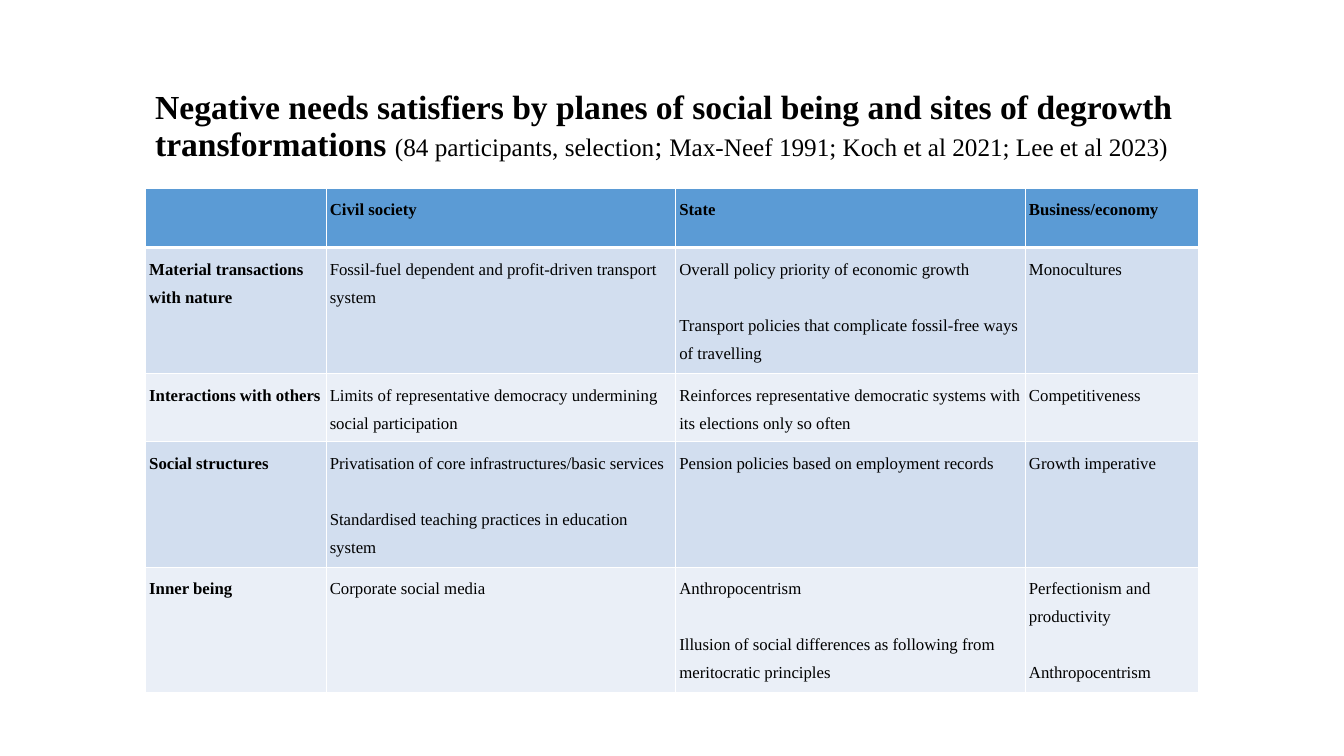
from lxml.etree import SubElement
from pptx import Presentation
from pptx.dml.color import RGBColor
from pptx.enum.text import MSO_ANCHOR, PP_ALIGN
from pptx.oxml.ns import qn
from pptx.util import Cm, Pt

FONT = "Times New Roman"
BLACK, WHITE = "000000", "FFFFFF"
HEADER_FILL, BAND_FILLS = "5B9BD5", ("D2DEEF", "EAEFF7")

# text, size, bold
TITLE = [
    ("Negative needs satisfiers by planes of social being and sites of "
     "degrowth transformations ", 24, True),
    ("(84 participants, selection", 18, False),
    ("; ", 20, False),
    ("Max-Neef 1991; Koch et al 2021; Lee et al 2023)", 18, False),
]

SITES = ["", "Civil society", "State", "Business/economy"]

# plane of social being, then the satisfiers at each site
PLANES = [
    ("Material transactions with nature",
     ["Fossil-fuel dependent and profit-driven transport system"],
     ["Overall policy priority of economic growth",
      "Transport policies that complicate fossil-free ways of travelling"],
     ["Monocultures"]),
    ("Interactions with others",
     ["Limits of representative democracy undermining social participation"],
     ["Reinforces representative democratic systems with its elections only so often"],
     ["Competitiveness"]),
    ("Social structures",
     ["Privatisation of core infrastructures/basic services",
      "Standardised teaching practices in education system"],
     ["Pension policies based on employment records"],
     ["Growth imperative"]),
    ("Inner being",
     ["Corporate social media"],
     ["Anthropocentrism",
      "Illusion of social differences as following from meritocratic principles"],
     ["Perfectionism and productivity", "Anthropocentrism"]),
]

COLUMN_WIDTHS = [4.55, 8.81, 8.81, 4.37]
ROW_HEIGHTS = [1.5, 3.03, 1.62, 3.05, 3.02]
CELL_INSET = 0.09


def rgb(color):
    return RGBColor.from_string(color)


def add_run(paragraph, text, size, bold):
    run = paragraph.add_run()
    run.text = text
    run.font.name = FONT
    run.font.size = Pt(size)
    run.font.bold = bold
    run.font.color.rgb = rgb(BLACK)


def add_borders(cell, top, bottom):
    """Draw white cell borders; top and bottom widths are in points."""
    properties = cell._tc.get_or_add_tcPr()
    for side, width in (("L", 1), ("R", 1), ("T", top), ("B", bottom)):
        line = SubElement(properties, qn(f"a:ln{side}"), w=str(Pt(width)))
        fill = SubElement(line, qn("a:solidFill"))
        SubElement(fill, qn("a:srgbClr"), val=WHITE)


def fill_cell(cell, texts, bold, fill, alignment, top=1, bottom=1):
    add_borders(cell, top, bottom)
    cell.fill.solid()
    cell.fill.fore_color.rgb = rgb(fill)
    cell.margin_left = cell.margin_right = Cm(CELL_INSET)
    cell.margin_top = cell.margin_bottom = Cm(CELL_INSET)
    frame = cell.text_frame
    for index, text in enumerate(texts):
        paragraph = frame.add_paragraph() if index else frame.paragraphs[0]
        paragraph.alignment = alignment
        paragraph.line_spacing = 1.5
        if index:
            paragraph.space_before = Pt(20)
        if text:
            add_run(paragraph, text, 12, bold)


def add_title(slide):
    frame = slide.shapes.add_textbox(Cm(3.66), Cm(2.26), Cm(27.13), Cm(1.88)).text_frame
    frame.word_wrap = True
    frame.vertical_anchor = MSO_ANCHOR.MIDDLE
    paragraph = frame.paragraphs[0]
    paragraph.line_spacing = 0.9
    for text, size, bold in TITLE:
        add_run(paragraph, text, size, bold)


def add_satisfier_table(slide):
    table = slide.shapes.add_table(
        len(ROW_HEIGHTS), len(COLUMN_WIDTHS), Cm(3.67), Cm(4.74),
        Cm(sum(COLUMN_WIDTHS)), Cm(sum(ROW_HEIGHTS))).table
    for column, width in zip(table.columns, COLUMN_WIDTHS):
        column.width = Cm(width)
    for row, height in zip(table.rows, ROW_HEIGHTS):
        row.height = Cm(height)

    for column, site in enumerate(SITES):
        fill_cell(table.cell(0, column), [site], True, HEADER_FILL,
                  PP_ALIGN.JUSTIFY, bottom=3)
    for row, (plane, *satisfiers) in enumerate(PLANES, start=1):
        for column, texts in enumerate([[plane], *satisfiers]):
            fill_cell(table.cell(row, column), texts, column == 0,
                      BAND_FILLS[(row - 1) % 2], PP_ALIGN.LEFT,
                      top=3 if row == 1 else 1)


def main():
    presentation = Presentation()
    presentation.slide_width, presentation.slide_height = Cm(33.87), Cm(19.05)
    slide = presentation.slides.add_slide(presentation.slide_layouts[6])
    add_title(slide)
    add_satisfier_table(slide)
    presentation.save("out.pptx")


if __name__ == "__main__":
    main()
